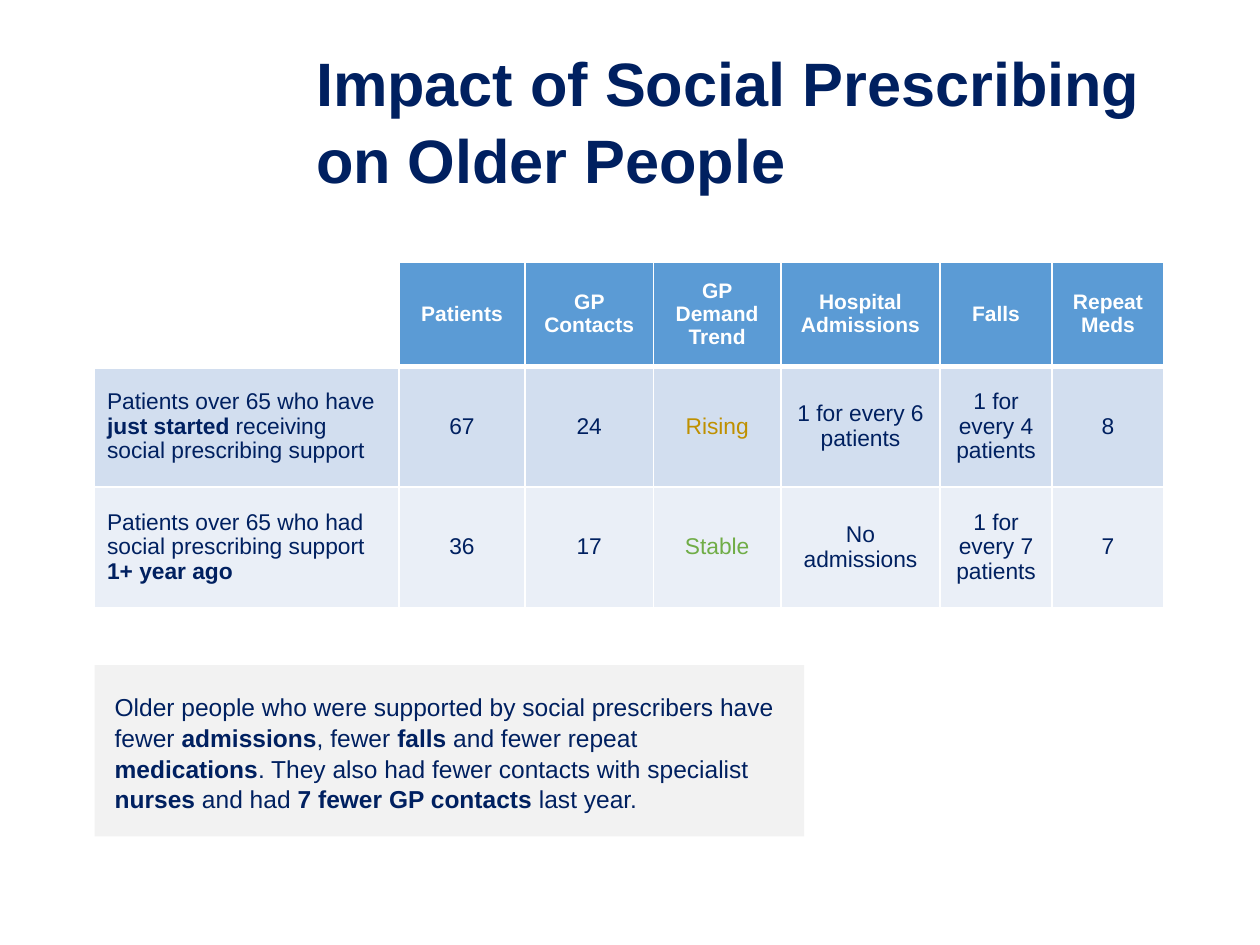
from lxml.etree import SubElement
from pptx import Presentation
from pptx.dml.color import RGBColor
from pptx.enum.shapes import MSO_SHAPE
from pptx.enum.text import MSO_ANCHOR, MSO_AUTO_SIZE, PP_ALIGN
from pptx.oxml.ns import qn
from pptx.util import Pt

NAVY = RGBColor(0x00, 0x20, 0x60)
WHITE = RGBColor(0xFF, 0xFF, 0xFF)
BLUE = RGBColor(0x5B, 0x9B, 0xD5)
GOLD = RGBColor(0xBF, 0x90, 0x00)
GREEN = RGBColor(0x70, 0xAD, 0x47)
GREY = RGBColor(0xF2, 0xF2, 0xF2)
BANDS = [BLUE, RGBColor(0xD2, 0xDE, 0xEF), RGBColor(0xEA, 0xEF, 0xF7)]
TRENDS = {"Rising": GOLD, "Stable": GREEN}

LEFT = 54
WIDTHS = [174, 72, 73.4, 72.8, 91, 64, 64]
HEIGHTS = [59.4, 69, 69]
ROWS = [
    ["", "Patients", "GP Contacts", "GP Demand Trend",
     "Hospital Admissions", "Falls", "Repeat Meds"],
    ["Patients over 65 who have *just started* receiving social prescribing support",
     "67", "24", "Rising", "1 for every 6 patients", "1 for every 4 patients", "8"],
    ["Patients over 65 who had social prescribing support *1+ year ago*",
     "36", "17", "Stable", "No admissions", "1 for every 7 patients", "7"],
]
SUMMARY = (
    "Older people who were supported by social prescribers have fewer *admissions*, "
    "fewer *falls* and fewer repeat *medications*. They also had fewer contacts with "
    "specialist *nurses* and had *7 fewer GP contacts *last year."
)


def write(frame, text, size, color, spacing, align=PP_ALIGN.LEFT):
    """Fill a frame with one paragraph; parts between asterisks are bold."""
    para = frame.paragraphs[0]
    para.alignment = align
    para.line_spacing = spacing
    for i, part in enumerate(text.split("*")):
        if part:
            run = para.add_run()
            run.text = part
            run.font.name = "Arial"
            run.font.size = Pt(size)
            run.font.bold = i % 2 == 1
            run.font.color.rgb = color


def inset(frame, side, top):
    frame.margin_left = frame.margin_right = Pt(side)
    frame.margin_top = frame.margin_bottom = Pt(top)
    frame.word_wrap = True


def place(shape, left, top, width, height):
    shape.left, shape.top = Pt(left), Pt(top)
    shape.width, shape.height = Pt(width), Pt(height)


def add_title(slide):
    title = slide.shapes.title
    place(title, 177, 20.2, 516, 51)
    frame = title.text_frame
    inset(frame, 3.6, 3.6)
    frame.auto_size = MSO_AUTO_SIZE.NONE
    frame.vertical_anchor = MSO_ANCHOR.TOP
    write(frame, "*Impact of Social Prescribing on Older People*", 35, NAVY, 1.05)


def set_edges(cell, widths):
    """Draw white cell borders; widths maps a side letter to points."""
    props = cell._tc.get_or_add_tcPr()
    for side, width in widths.items():
        line = SubElement(props, qn(f"a:ln{side}"), w=str(Pt(width)))
        fill = SubElement(line, qn("a:solidFill"))
        SubElement(fill, qn("a:srgbClr"), val=str(WHITE))


def fill_cell(cell, row, col, text):
    head = row == 0
    set_edges(cell, {"L": 1, "R": 1, "T": 3 if row == 1 else 1, "B": 3 if head else 1})
    if not text:
        cell.fill.background()
        return
    cell.fill.solid()
    cell.fill.fore_color.rgb = BANDS[row]
    cell.vertical_anchor = MSO_ANCHOR.MIDDLE
    align = PP_ALIGN.CENTER if col else PP_ALIGN.LEFT
    if head:
        write(cell.text_frame, f"*{text}*", 12, WHITE, 0.97, align)
    else:
        write(cell.text_frame, text, 13, TRENDS.get(text, NAVY), 0.97, align)


def add_grid(slide):
    frame = slide.shapes.add_table(len(ROWS), len(WIDTHS), Pt(LEFT), Pt(150),
                                   Pt(sum(WIDTHS)), Pt(sum(HEIGHTS)))
    table = frame.table
    table.first_row = table.horz_banding = False
    for col, width in zip(table.columns, WIDTHS):
        col.width = Pt(width)
    for row, height in zip(table.rows, HEIGHTS):
        row.height = Pt(height)
    for r, texts in enumerate(ROWS):
        for c, text in enumerate(texts):
            fill_cell(table.cell(r, c), r, c, text)


def add_panel(slide):
    panel = slide.shapes.add_shape(MSO_SHAPE.RECTANGLE, Pt(LEFT), Pt(380), Pt(405.5), Pt(98))
    panel.shadow.inherit = False
    panel.fill.solid()
    panel.fill.fore_color.rgb = GREY
    panel.line.fill.background()
    inset(panel.text_frame, 11.5, 15)
    panel.text_frame.vertical_anchor = MSO_ANCHOR.TOP
    write(panel.text_frame, SUMMARY, 14, NAVY, 1.04)


def main():
    deck = Presentation()
    deck.slide_width, deck.slide_height = Pt(720), Pt(540)
    slide = deck.slides.add_slide(deck.slide_layouts[5])
    add_title(slide)
    add_grid(slide)
    add_panel(slide)
    deck.save("out.pptx")


if __name__ == "__main__":
    main()
